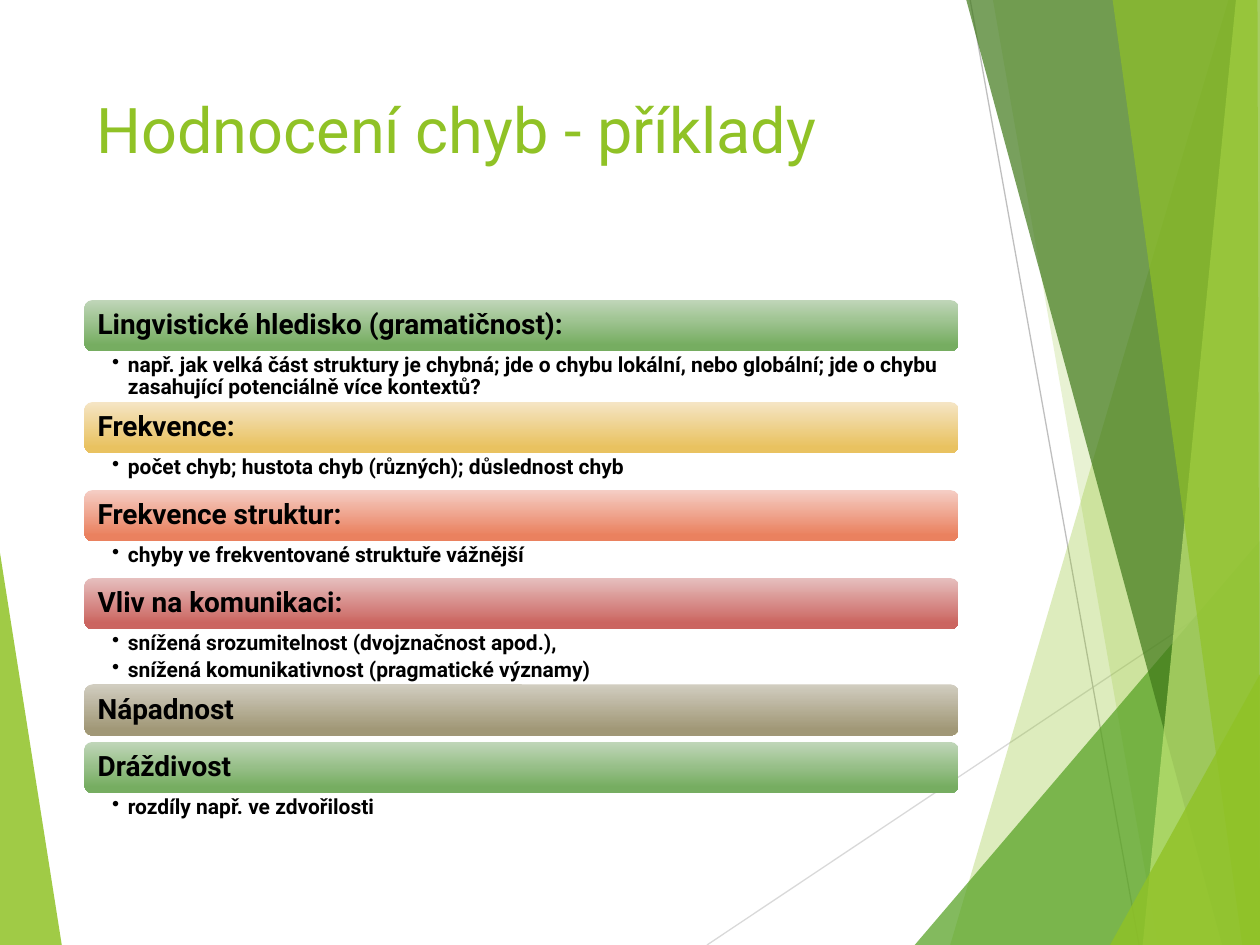
from lxml import etree
from pptx import Presentation
from pptx.dml.color import RGBColor
from pptx.enum.shapes import MSO_CONNECTOR, MSO_SHAPE
from pptx.enum.text import MSO_ANCHOR, PP_ALIGN
from pptx.oxml.ns import qn
from pptx.util import Pt

LINE = MSO_CONNECTOR.STRAIGHT
ROUND = MSO_SHAPE.ROUNDED_RECTANGLE
MIDDLE, TOP = MSO_ANCHOR.MIDDLE, MSO_ANCHOR.TOP
LEFT = PP_ALIGN.LEFT

WIDE, HIGH = 720, 540
FONT = "Roboto"
COLORS = {
    "lime": "90C226", "leaf": "54A021", "pine": "3F7819", "pale": "C0E474",
    "black": "000000", "mist": "D9D9D9", "gray": "BFBFBF",
}
FADES = {
    "green": ("C0D6B9", "76AD61"), "gold": ("F5E5C5", "E9C260"),
    "coral": ("F5CEC5", "EA815F"), "red": ("E6BFBE", "CB6560"),
    "khaki": ("D1CDC0", "A19877"),
}

# Start, end, colour
RAYS = [
    ((404, HIGH), (WIDE, 329), "mist"),
    ((554.4, 0), (650.9, HIGH), "gray"),
]
# Colour, opacity in percent, corners
EDGE = [(WIDE, HIGH), (WIDE, 0)]
FACETS = [
    ("lime", 30, [(702, 0), (543, HIGH), *EDGE]),
    ("lime", 20, [(567.4, 0), (661.7, HIGH), *EDGE]),
    ("leaf", 72, [(522.7, HIGH), (WIDE, 309), (WIDE, HIGH)]),
    ("pine", 70, [(552.2, 0), (698.4, HIGH), *EDGE]),
    ("pale", 70, [(706.3, 0), (653, HIGH), *EDGE]),
    ("lime", 65, [(635.8, 0), (709.9, HIGH), (WIDE, HIGH), (718.6, 0)]),
    ("lime", 80, [(634.3, HIGH), (WIDE, 385.2), (WIDE, HIGH)]),
]
WEDGE = ("lime", 85, [(0, 316), (35.3, HIGH), (0, HIGH)])

# Heading, fade, height below the bar, points
TOPICS = [
    ("Lingvistické hledisko (gramatičnost):", "green", 28.9,
     ["např. jak velká část struktury je chybná; jde o chybu lokální, nebo "
      "globální; jde o chybu zasahující potenciálně více kontextů?"]),
    ("Frekvence:", "gold", 20.9,
     ["počet chyb; hustota chyb (různých); důslednost chyb"]),
    ("Frekvence struktur:", "coral", 20.9,
     ["chyby ve frekventované struktuře vážnější"]),
    ("Vliv na komunikaci:", "red", 31.3,
     ["snížená srozumitelnost (dvojznačnost apod.),",
      "snížená komunikativnost (pragmatické významy)"]),
    ("Nápadnost", "khaki", 3.5, []),
    ("Dráždivost", "green", 20.9, ["rozdíly např. ve zdvořilosti"]),
]
BAR_X, BAR_Y, BAR_W, BAR_H = 48.2, 171.4, 499.7, 29.4


def rgb(name):
    return RGBColor.from_string(COLORS[name])


def add_facet(slide, color, alpha, points):
    """Draw a see-through polygon."""
    dots = [(Pt(x), Pt(y)) for x, y in points]
    form = slide.shapes.build_freeform(*dots[0])
    form.add_line_segments(dots[1:], close=True)
    shape = form.convert_to_shape()
    shape.shadow.inherit = False
    shape.line.fill.background()
    shape.fill.solid()
    shape.fill.fore_color.rgb = rgb(color)
    tint = shape._element.spPr.find(".//" + qn("a:srgbClr"))
    etree.SubElement(tint, qn("a:alpha"), val=str(alpha * 1000))


def add_ray(slide, start, end, color):
    ends = [Pt(n) for n in (*start, *end)]
    ray = slide.shapes.add_connector(LINE, *ends)
    ray.line.color.rgb = rgb(color)
    ray.line.width = Pt(0.75)
    etree.SubElement(ray._element.spPr, qn("a:effectLst"))


def set_frame(frame, anchor, left, top, right, base):
    frame.word_wrap = True
    frame.vertical_anchor = anchor
    frame.margin_left, frame.margin_top = Pt(left), Pt(top)
    frame.margin_right, frame.margin_bottom = Pt(right), Pt(base)


def add_run(para, text, size, color="black", bold=True):
    para.alignment = LEFT
    run = para.add_run()
    run.text = text
    run.font.name = FONT
    run.font.size = Pt(size)
    run.font.bold = bold
    run.font.color.rgb = rgb(color)


def add_box(slide, x, y, w, h):
    return slide.shapes.add_textbox(Pt(x), Pt(y), Pt(w), Pt(h)).text_frame


def add_title(slide, text):
    frame = add_box(slide, 48.2, 48.2, BAR_W, 103.7)
    set_frame(frame, TOP, 7.2, 3.6, 7.2, 3.6)
    add_run(frame.paragraphs[0], text, 36, "lime", False)


def add_bar(slide, y, text, fade):
    bar = slide.shapes.add_shape(ROUND, Pt(BAR_X), Pt(y), Pt(BAR_W), Pt(BAR_H))
    bar.shadow.inherit = False
    bar.line.fill.background()
    bar.fill.gradient()
    bar.fill.gradient_angle = 270
    for stop, tint, place in zip(bar.fill.gradient_stops, FADES[fade], (0, 0.88)):
        stop.color.rgb = RGBColor.from_string(tint)
        stop.position = place
    set_frame(bar.text_frame, MIDDLE, 6.2, 4, 6.2, 4)
    para = bar.text_frame.paragraphs[0]
    para.line_spacing = 0.9
    add_run(para, text, 16)


def add_list(slide, y, h, items):
    frame = add_box(slide, BAR_X, y, BAR_W, h)
    set_frame(frame, TOP, 15.9, 1.6, 8.9, 1.6)
    for i, item in enumerate(items):
        para = frame.add_paragraph() if i else frame.paragraphs[0]
        props = para._p.get_or_add_pPr()
        props.set("marL", str(Pt(9)))
        props.set("indent", str(Pt(-9)))
        etree.SubElement(props, qn("a:buChar"), char="•")
        para.level = 1
        para.line_spacing = 0.9
        para.space_after = Pt(2.8)
        add_run(para, item, 12)


def main():
    deck = Presentation()
    deck.slide_width, deck.slide_height = Pt(WIDE), Pt(HIGH)
    slide = deck.slides.add_slide(deck.slide_layouts[6])

    add_facet(slide, *WEDGE)
    for ray in RAYS:
        add_ray(slide, *ray)
    for facet in FACETS:
        add_facet(slide, *facet)

    add_title(slide, "Hodnocení chyb - příklady")
    y = BAR_Y
    for head, fade, below, items in TOPICS:
        add_bar(slide, y, head, fade)
        y += BAR_H
        if items:
            add_list(slide, y, below, items)
        y += below

    deck.save("out.pptx")


if __name__ == "__main__":
    main()
